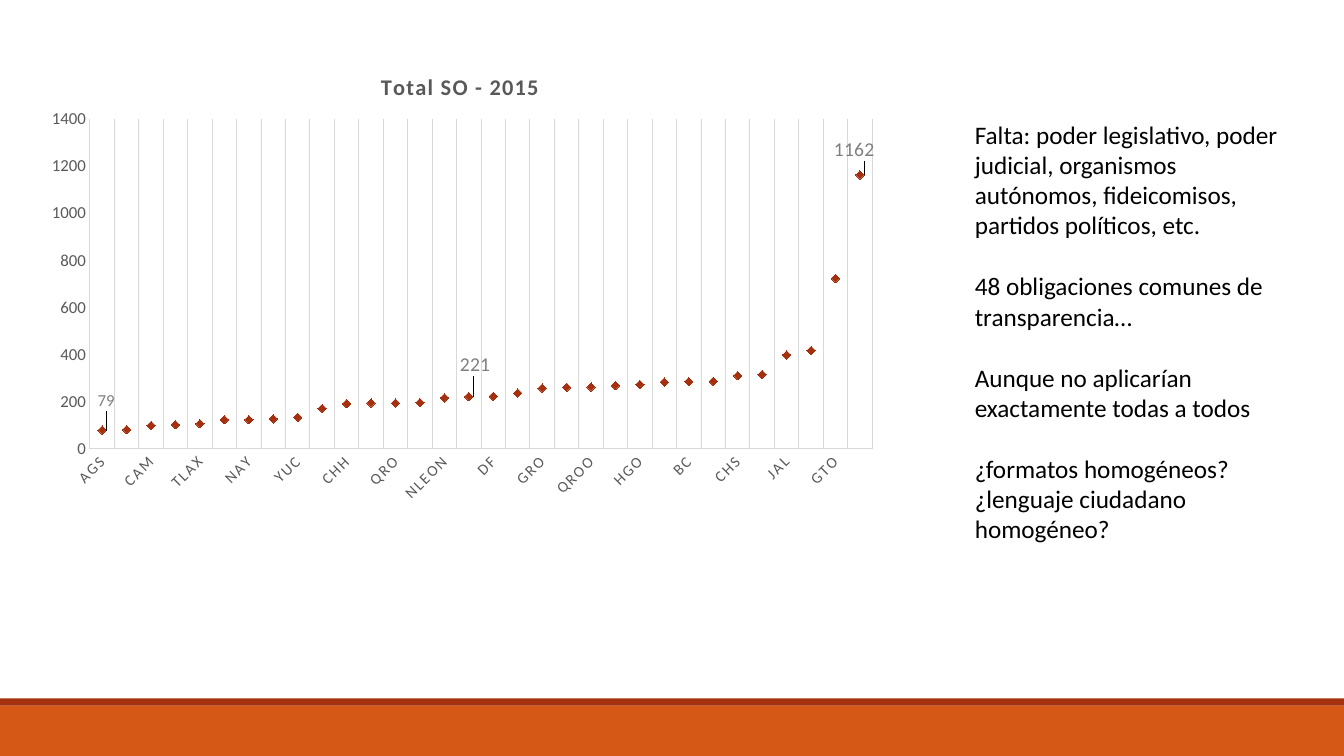
from lxml.etree import SubElement
from pptx import Presentation
from pptx.chart.data import CategoryChartData
from pptx.dml.color import RGBColor
from pptx.enum.chart import XL_CHART_TYPE, XL_LABEL_POSITION, XL_MARKER_STYLE, XL_TICK_MARK
from pptx.enum.shapes import MSO_SHAPE
from pptx.enum.text import MSO_AUTO_SIZE
from pptx.oxml import parse_xml
from pptx.oxml.ns import nsdecls, qn
from pptx.util import Pt

PX = 9144
FONT = "Calibri"
COLORS = {
    "black": "000000",
    "gray": "595959",
    "label": "7F7F7F",
    "grid": "D9D9D9",
    "rust": "A5300F",
    "orange": "D55816",
}
OBLIGATED = {
    "AGS": 79, "ZAC": 81, "CAM": 99, "DGO": 102, "TLAX": 106, "BCS": 123,
    "NAY": 123, "OAX": 127, "YUC": 133, "COL": 171, "CHH": 191, "SLP": 194,
    "QRO": 194, "SON": 196, "NLEON": 216, "MOR": 221, "DF": 222, "TAM": 236,
    "GRO": 257, "TAB": 261, "QROO": 262, "COA": 268, "HGO": 273, "SIN": 283,
    "BC": 285, "PUE": 286, "CHS": 310, "MIC": 315, "JAL": 398, "VER": 417,
    "GTO": 723, "MEX": 1162,
}
CALLOUTS = {
    "AGS": (12, -0.015, -0.062),
    "MOR": (14, -0.02, -0.068),
    "MEX": (14, -0.04, -0.055),
}
REMARKS = [
    ("Falta: poder legislativo, poder judicial, organismos autónomos, "
     "fideicomisos, partidos políticos, etc.", 0),
    ("48 obligaciones comunes de transparencia…", 22),
    ("Aunque no aplicarían exactamente todas a todos", 22),
    ("¿formatos homogéneos?", 22),
    ("¿lenguaje ciudadano homogéneo?", 0),
]
LEADER_LINES = (
    f'<c:extLst {nsdecls("c")}><c:ext uri="{{CE6537A1-D6FC-4f65-9D91-7224C49458BB}}" '
    'xmlns:c15="http://schemas.officedoc.com/office/drawing/2012/chart">'
    '<c15:showLeaderLines val="1"/></c:ext></c:extLst>'
)


def color(name):
    return RGBColor.from_string(COLORS[name])


def emu(box):
    return [length * PX for length in box]


def style_font(font, size, name, bold=False):
    font.name = FONT
    font.size = Pt(size)
    font.bold = bold
    font.color.rgb = color(name)


def style_line(line, name):
    line.color.rgb = color(name)
    line.width = Pt(0.75)


def place(parent, index, **settings):
    for old in parent.findall(qn("c:layout")):
        parent.remove(old)
    layout = parse_xml(f'<c:layout {nsdecls("c")}><c:manualLayout/></c:layout>')
    for tag, value in settings.items():
        SubElement(layout[0], qn(f"c:{tag}"), val=str(value))
    parent.insert(index, layout)


def add_band(page, box, name):
    band = page.shapes.add_shape(MSO_SHAPE.RECTANGLE, *emu(box))
    band.shadow.inherit = False
    band.fill.solid()
    band.fill.fore_color.rgb = color(name)
    band.line.fill.background()


def add_footer(page, box):
    left, top, width, height = box
    stripe = 7
    add_band(page, (left, top + stripe, width, height - stripe), "orange")
    add_band(page, (left, top, width, stripe), "rust")


def style_axes(chart):
    for axis, size in ((chart.category_axis, 11), (chart.value_axis, 12)):
        axis.major_tick_mark = XL_TICK_MARK.NONE
        axis.minor_tick_mark = XL_TICK_MARK.NONE
        style_line(axis.format.line, "grid")
        style_font(axis.tick_labels.font, size, "gray")
    chart.category_axis.has_major_gridlines = True
    style_line(chart.category_axis.major_gridlines.format.line, "grid")
    chart.value_axis.has_major_gridlines = False
    chart.value_axis.minimum_scale = 0
    chart.value_axis.maximum_scale = 1400
    chart.value_axis.major_unit = 200
    labels = chart.element.xpath(".//c:catAx/c:txPr")[0]
    labels.find(qn("a:bodyPr")).set("rot", "-2700000")
    labels.xpath(".//a:defRPr")[0].set("spc", "120")


def style_series(chart):
    series = chart.plots[0].series[0]
    series.smooth = False
    series.format.line.fill.background()
    series.marker.style = XL_MARKER_STYLE.DIAMOND
    series.marker.size = 6
    series.marker.format.fill.solid()
    series.marker.format.fill.fore_color.rgb = color("rust")
    series.marker.format.line.color.rgb = color("rust")
    states = list(OBLIGATED)
    for state, (size, _, _) in CALLOUTS.items():
        label = series.points[states.index(state)].data_label
        style_font(label.font, size, "label")
        label.position = XL_LABEL_POSITION.RIGHT
    series.data_labels.show_value = False
    for element, (_, x, y) in zip(chart.element.xpath(".//c:dLbl"), CALLOUTS.values()):
        place(element, 1, x=x, y=y)
    chart.element.xpath(".//c:ser/c:dLbls")[0].append(parse_xml(LEADER_LINES))


def add_state_chart(page, box):
    data = CategoryChartData(number_format="0")
    data.categories = list(OBLIGATED)
    data.add_series("Total SO - 2015", list(OBLIGATED.values()))
    chart = page.shapes.add_chart(XL_CHART_TYPE.LINE_MARKERS, *emu(box), data).chart
    style_font(chart.font, 10, "black")
    chart.has_legend = False
    chart.has_title = True
    chart.chart_title.include_in_layout = False
    span = chart.chart_title.text_frame.paragraphs[0].add_run()
    span.text = "Total SO - 2015"
    style_font(span.font, 16, "gray", bold=True)
    chart.element.xpath(".//c:title//a:rPr")[0].set("spc", "100")
    chart.plots[0].vary_by_categories = False
    style_axes(chart)
    style_series(chart)
    place(chart.element.xpath(".//c:title")[0], 1, xMode="edge", yMode="edge", x=0.4, y=0.05)
    place(chart.element.xpath(".//c:plotArea")[0], 0, layoutTarget="inner",
          xMode="edge", yMode="edge", x=0.064, y=0.159, w=0.916, h=0.704)


def add_remarks(page, box):
    frame = page.shapes.add_textbox(*emu(box)).text_frame
    frame.word_wrap = True
    frame.auto_size = MSO_AUTO_SIZE.SHAPE_TO_FIT_TEXT
    for number, (text, gap) in enumerate(REMARKS):
        para = frame.add_paragraph() if number else frame.paragraphs[0]
        para.space_before = Pt(gap)
        span = para.add_run()
        span.text = text
        style_font(span.font, 18, "black")


def main():
    deck = Presentation()
    deck.slide_width, deck.slide_height = emu((1333, 750))
    page = deck.slides.add_slide(deck.slide_layouts[6])
    add_footer(page, (0, 693, 1333, 57))
    add_state_chart(page, (35, 44, 847, 465))
    add_remarks(page, (957, 113, 324, 464))
    deck.save("out.pptx")


if __name__ == "__main__":
    main()
